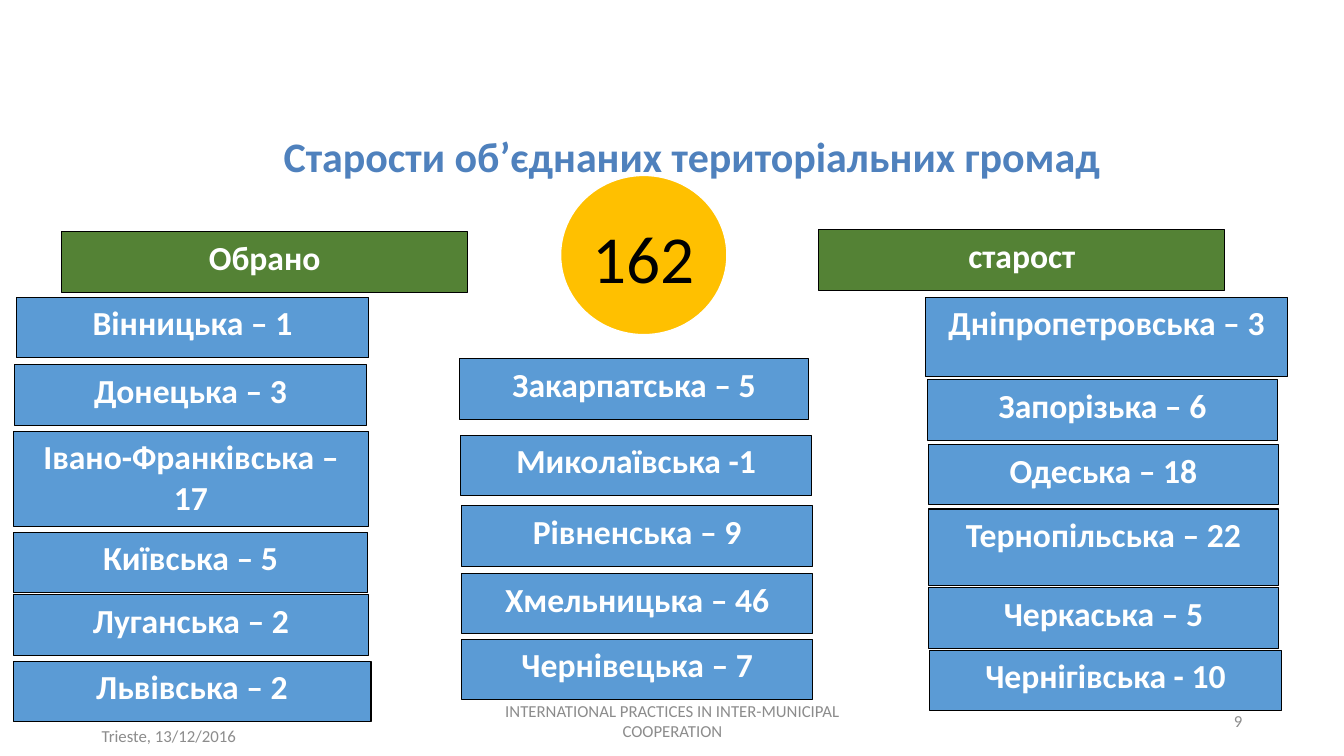
from pptx import Presentation
from pptx.dml.color import RGBColor
from pptx.enum.shapes import MSO_SHAPE as Shape
from pptx.enum.text import MSO_ANCHOR as Anchor, PP_ALIGN as Align
from pptx.util import Emu, Pt

PX = 9144
WHITE = RGBColor(0xFF, 0xFF, 0xFF)
BLACK = RGBColor(0x00, 0x00, 0x00)
GREY = RGBColor(0x8C, 0x8C, 0x8C)
TITLE_BLUE = RGBColor(0x4F, 0x81, 0xBD)
REGION_BLUE = RGBColor(0x5B, 0x9B, 0xD5)
GREEN = RGBColor(0x54, 0x82, 0x35)
GOLD = RGBColor(0xFF, 0xC0, 0x00)

deck = Presentation()
deck.slide_width, deck.slide_height = Emu(1333 * PX), Emu(750 * PX)
slide = deck.slides.add_slide(deck.slide_layouts[6])


def write(holder, text, size, color, bold=False, align=Align.CENTER, anchor=Anchor.MIDDLE):
    frame = holder.text_frame
    frame.text = text
    frame.word_wrap = True
    frame.vertical_anchor = anchor
    paragraph = frame.paragraphs[0]
    paragraph.alignment = align
    font = paragraph.runs[0].font
    font.name, font.size, font.bold = "Calibri", Pt(size), bold
    font.color.rgb = color


def add_filled(kind, bounds, fill, outline=None, outline_width=0.75):
    filled = slide.shapes.add_shape(kind, *(Emu(n * PX) for n in bounds))
    filled.shadow.inherit = False
    filled.fill.solid()
    filled.fill.fore_color.rgb = fill
    if outline is None:
        filled.line.fill.background()
    else:
        filled.line.color.rgb = outline
        filled.line.width = Pt(outline_width)
    return filled


captions = [
    ("Trieste, 13/12/2016", (91, 710, 300, 40), 12, GREY, False, Align.LEFT),
    ("INTERNATIONAL PRACTICES IN INTER-MUNICIPAL COOPERATION",
     (442, 695, 450, 40), 12, GREY, False, Align.CENTER),
    ("9", (942, 695, 300, 40), 12, GREY, False, Align.RIGHT),
    ("Старости об’єднаних територіальних громад",
     (182, 127, 1009, 56), 30, TITLE_BLUE, True, Align.CENTER),
]
for text, bounds, size, color, bold, align in captions:
    caption = slide.shapes.add_textbox(*(Emu(n * PX) for n in bounds))
    write(caption, text, size, color, bold, align)

add_filled(Shape.OVAL, (556, 174, 165, 158), GOLD, WHITE, 1)
total = add_filled(Shape.RECTANGLE, (580, 202, 116, 106), GOLD)
write(total, "162", 48, BLACK)
total_frame = total.text_frame
total_frame.margin_left = total_frame.margin_right = 0
total_frame.margin_top = total_frame.margin_bottom = 0

headings = [
    ("Обрано", 61, 230, 403, 60),
    ("старост", 812, 228, 403, 60),
]
regions = [
    ("Вінницька – 1", 16, 295, 350, 60),
    ("Донецька – 3", 14, 362, 350, 60),
    ("Івано-Франківська – 17", 13, 428, 353, 94),
    ("Київська – 5", 13, 528, 352, 60),
    ("Луганська – 2", 13, 590, 353, 60),
    ("Львівська – 2", 13, 656, 355, 60),
    ("Закарпатська – 5", 456, 356, 346, 60),
    ("Миколаївська -1", 457, 432, 348, 60),
    ("Рівненська – 9", 458, 502, 348, 60),
    ("Хмельницька – 46", 458, 569, 348, 60),
    ("Чернівецька – 7", 458, 634, 348, 60),
    ("Дніпропетровська – 3", 918, 295, 359, 79),
    ("Запорізька – 6", 920, 377, 347, 60),
    ("Одеська – 18", 921, 441, 347, 60),
    ("Тернопільська – 22", 921, 505, 347, 76),
    ("Черкаська – 5", 921, 583, 347, 60),
    ("Чернігівська - 10", 922, 645, 349, 60),
]
for fill, entries in ((GREEN, headings), (REGION_BLUE, regions)):
    for text, *bounds in entries:
        label = add_filled(Shape.RECTANGLE, bounds, fill, BLACK)
        write(label, text, 24, WHITE, bold=True, anchor=Anchor.TOP)

deck.save("out.pptx")
